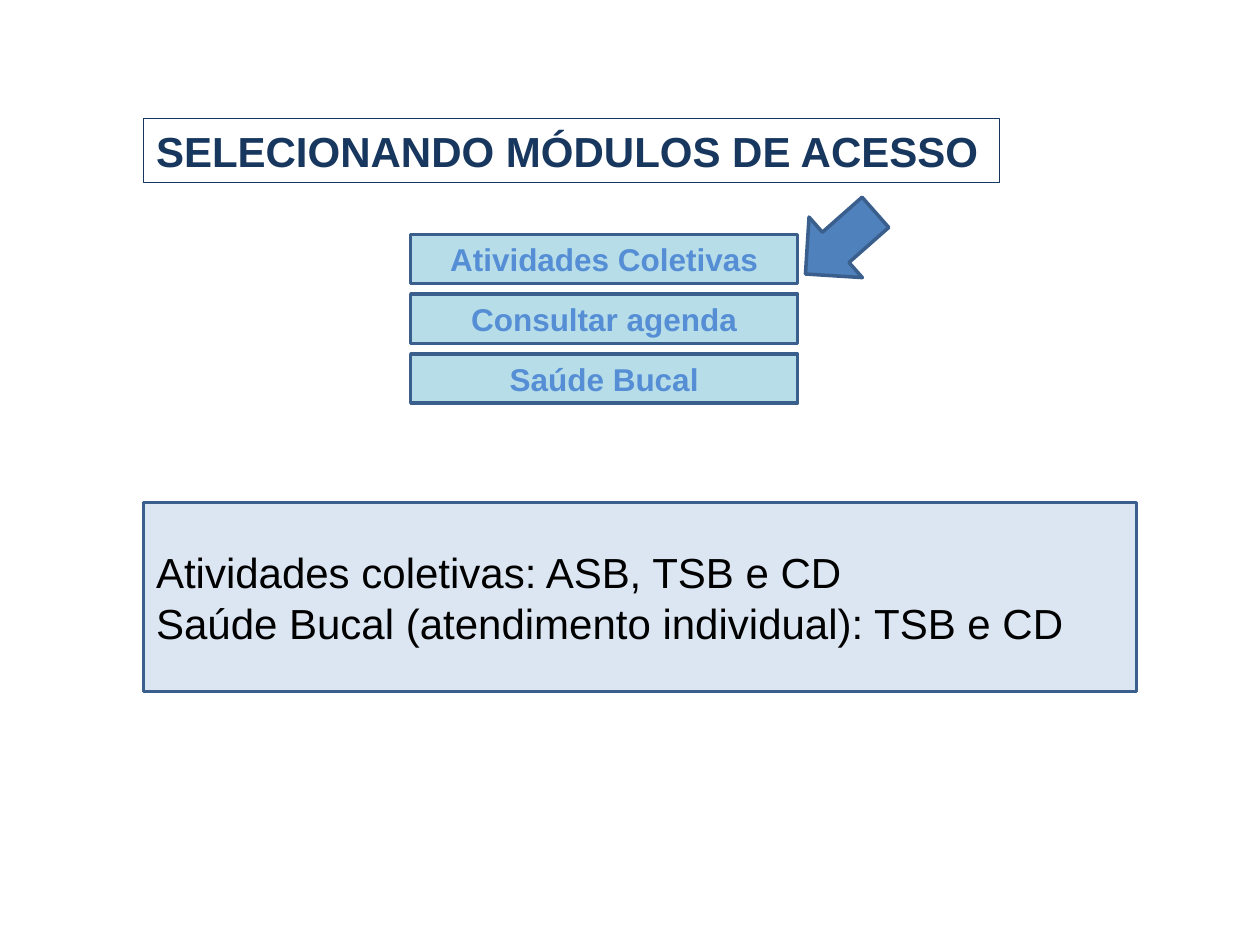
from pptx import Presentation
from pptx.dml.color import RGBColor
from pptx.enum.shapes import MSO_SHAPE as SHAPE
from pptx.enum.text import MSO_ANCHOR as ANCHOR, PP_ALIGN as ALIGN
from pptx.util import Inches, Pt

NAVY = RGBColor(0x17, 0x37, 0x5E)
BORDER = RGBColor(0x3A, 0x5F, 0x8C)
BLUE = RGBColor(0x4F, 0x81, 0xBD)
LABEL = RGBColor(0x55, 0x8E, 0xD5)
AQUA = RGBColor(0xB7, 0xDE, 0xE8)
PALE = RGBColor(0xDC, 0xE6, 0xF2)
BLACK = RGBColor(0, 0, 0)


def add_block(s, kind, box, fill=None, line=BORDER, weight=2):
    sp = s.shapes.add_shape(kind, *map(Inches, box))
    sp.shadow.inherit = False
    if fill is None:
        sp.fill.background()
    else:
        sp.fill.solid()
        sp.fill.fore_color.rgb = fill
    sp.line.color.rgb = line
    sp.line.width = Pt(weight)
    return sp


def write(sp, text, size=24, color=BLACK, bold=False, align=ALIGN.LEFT):
    tf = sp.text_frame
    tf.word_wrap = True
    tf.vertical_anchor = ANCHOR.MIDDLE
    tf.text = text
    for p in tf.paragraphs:
        p.alignment = align
        for r in p.runs:
            r.font.name = "Arial"
            r.font.size = Pt(size)
            r.font.bold = bold
            r.font.color.rgb = color


def add_title(s, box):
    sp = add_block(s, SHAPE.RECTANGLE, box, line=NAVY, weight=0.75)
    write(sp, "SELECIONANDO MÓDULOS DE ACESSO", color=NAVY, bold=True)


def add_modules(s, box, names):
    left, top, width, height = box
    button = 0.39
    step = (height - button) / (len(names) - 1)
    for i, name in enumerate(names):
        place = (left, top + i * step, width, button)
        sp = add_block(s, SHAPE.RECTANGLE, place, AQUA)
        write(sp, name, size=18, color=LABEL, bold=True, align=ALIGN.CENTER)


def add_pointer(s, box):
    sp = add_block(s, SHAPE.DOWN_ARROW, box, BLUE)
    sp.rotation = 48.6


def add_summary(s, box):
    sp = add_block(s, SHAPE.RECTANGLE, box, PALE)
    write(sp, "Atividades coletivas: ASB, TSB e CD\n"
              "Saúde Bucal (atendimento individual): TSB e CD")


def main():
    prs = Presentation()
    prs.slide_width, prs.slide_height = Inches(10), Inches(7.5)
    s = prs.slides.add_slide(prs.slide_layouts[6])
    add_summary(s, (1.14, 3.99, 7.88, 1.5))
    add_modules(s, (3.26, 1.86, 3.07, 1.34),
                ["Atividades Coletivas", "Consultar agenda", "Saúde Bucal"])
    add_title(s, (1.14, 0.94, 6.79, 0.51))
    add_pointer(s, (6.35, 1.56, 0.64, 0.74))
    prs.save("out.pptx")


if __name__ == "__main__":
    main()
